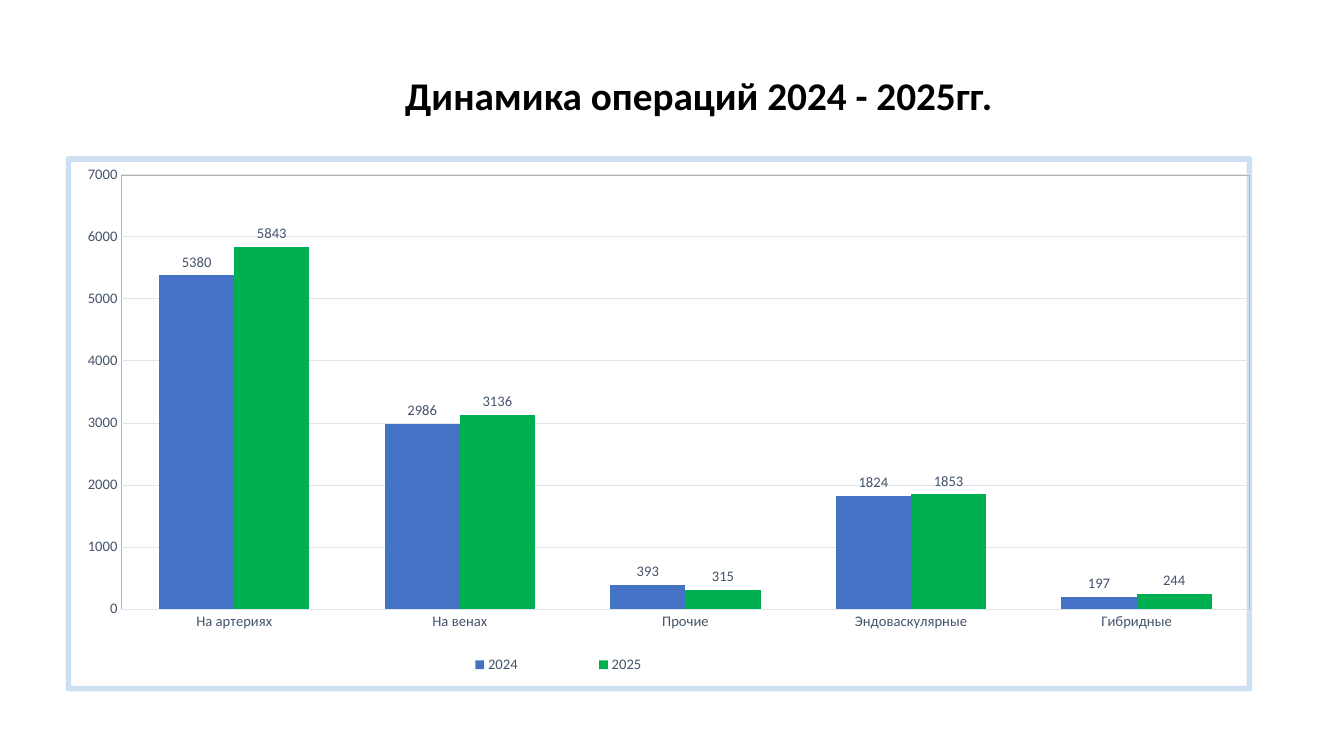
from dataclasses import dataclass
from lxml.etree import _Element as Node
from pptx import Presentation
from pptx.chart.chart import Chart
from pptx.chart.data import CategoryChartData as Data
from pptx.dml.color import RGBColor as Rgb
from pptx.enum.chart import XL_CHART_TYPE as Kind
from pptx.enum.chart import XL_LABEL_POSITION as Spot
from pptx.enum.chart import XL_LEGEND_POSITION as Side
from pptx.enum.chart import XL_TICK_MARK as Tick
from pptx.enum.text import MSO_ANCHOR as Anchor
from pptx.enum.text import PP_ALIGN as Align
from pptx.oxml import parse_xml
from pptx.oxml.ns import nsdecls, qn
from pptx.slide import Slide
from pptx.text.text import Font
from pptx.util import Inches, Pt

FACE = "Calibri"
HUES = {
    "title": "000000",
    "text": "44546A",
    "grid": "E0E5EB",
    "wall": "B3B3B3",
    "frame": "5B9BD5",
    "blue": "4472C4",
    "green": "00B050",
}


@dataclass
class Year:
    name: str
    counts: tuple[int, ...]
    hue: str


GROUPS = ("На артериях", "На венах", "Прочие", "Эндоваскулярные", "Гибридные")
YEARS = (
    Year("2024", (5380, 2986, 393, 1824, 197), "blue"),
    Year("2025", (5843, 3136, 315, 1853, 244), "green"),
)


def style(font: Font, size: float, hue: str, bold: bool = False) -> None:
    font.name = FACE
    font.size = Pt(size)
    font.bold = bold
    font.color.rgb = Rgb.from_string(HUES[hue])


def layout(x: float, y: float, w: float, h: float, inner: bool = False) -> Node:
    target = '<c:layoutTarget val="inner"/>' if inner else ""
    sizes = "".join(f'<c:{k} val="{v}"/>' for k, v in zip("xywh", (x, y, w, h)))
    return parse_xml(
        f'<c:layout {nsdecls("c")}><c:manualLayout>{target}'
        f'<c:xMode val="edge"/><c:yMode val="edge"/>{sizes}'
        "</c:manualLayout></c:layout>"
    )


def outline(hue: str, width: float, alpha: int = 100) -> Node:
    return parse_xml(
        f'<c:spPr {nsdecls("c", "a")}><a:noFill/><a:ln w="{Pt(width)}">'
        f'<a:solidFill><a:srgbClr val="{HUES[hue]}">'
        f'<a:alpha val="{alpha * 1000}"/></a:srgbClr></a:solidFill>'
        "<a:round/></a:ln></c:spPr>"
    )


def clear(node: Node) -> None:
    for old in node.findall(qn("c:layout")):
        node.remove(old)


def add_title(slide: Slide) -> None:
    title = slide.shapes.title
    title.left, title.top = Inches(1.18), Inches(0.25)
    title.width, title.height = Inches(11.5), Inches(1.45)
    frame = title.text_frame
    frame.text = "Динамика операций 2024 - 2025гг."
    frame.vertical_anchor = Anchor.MIDDLE
    line = frame.paragraphs[0]
    line.alignment = Align.CENTER
    line.line_spacing = 0.9
    style(line.font, 28, "title", True)


def set_axes(chart: Chart) -> None:
    for axis in (chart.category_axis, chart.value_axis):
        axis.major_tick_mark = axis.minor_tick_mark = Tick.NONE
        style(axis.tick_labels.font, 10.5, "text")
    value = chart.value_axis
    value.minimum_scale, value.maximum_scale = 0, 7000
    value.major_unit = 1000
    value.format.line.fill.background()
    for line in (chart.category_axis.format.line, value.major_gridlines.format.line):
        line.width = Pt(0.75)
        line.color.rgb = Rgb.from_string(HUES["grid"])


def set_bars(chart: Chart) -> None:
    plot = chart.plots[0]
    plot.gap_width, plot.overlap = 100, 0
    plot.vary_by_categories = False
    for bars, year in zip(plot.series, YEARS):
        bars.format.fill.solid()
        bars.format.fill.fore_color.rgb = Rgb.from_string(HUES[year.hue])
        labels = bars.data_labels
        labels.show_value = True
        labels.position = Spot.OUTSIDE_END
        style(labels.font, 10.5, "text")


def set_frame(chart: Chart) -> None:
    chart.has_legend = True
    legend = chart.legend
    legend.position = Side.BOTTOM
    legend.include_in_layout = False
    style(legend.font, 10.5, "text")
    root = chart.element.find(qn("c:chart"))
    key, area = root.find(qn("c:legend")), root.find(qn("c:plotArea"))
    clear(key)
    clear(area)
    key.find(qn("c:legendPos")).addnext(layout(0.28, 0.92, 0.27, 0.07))
    area.insert(0, layout(0.045, 0.03, 0.955, 0.82, True))
    area.append(outline("wall", 0.25))
    root.addnext(outline("frame", 4, 30))


def add_bars(slide: Slide) -> None:
    data = Data()
    data.categories = GROUPS
    for year in YEARS:
        data.add_series(year.name, year.counts)
    chart = slide.shapes.add_chart(
        Kind.COLUMN_CLUSTERED,
        Inches(0.65), Inches(1.55), Inches(11.77), Inches(5.31),
        data,
    ).chart
    chart.has_title = False
    style(chart.font, 10.5, "text")
    set_axes(chart)
    set_bars(chart)
    set_frame(chart)


def main() -> None:
    deck = Presentation()
    deck.slide_width, deck.slide_height = Inches(13.33), Inches(7.5)
    slide = deck.slides.add_slide(deck.slide_layouts[5])
    add_title(slide)
    add_bars(slide)
    deck.save("out.pptx")


if __name__ == "__main__":
    main()
